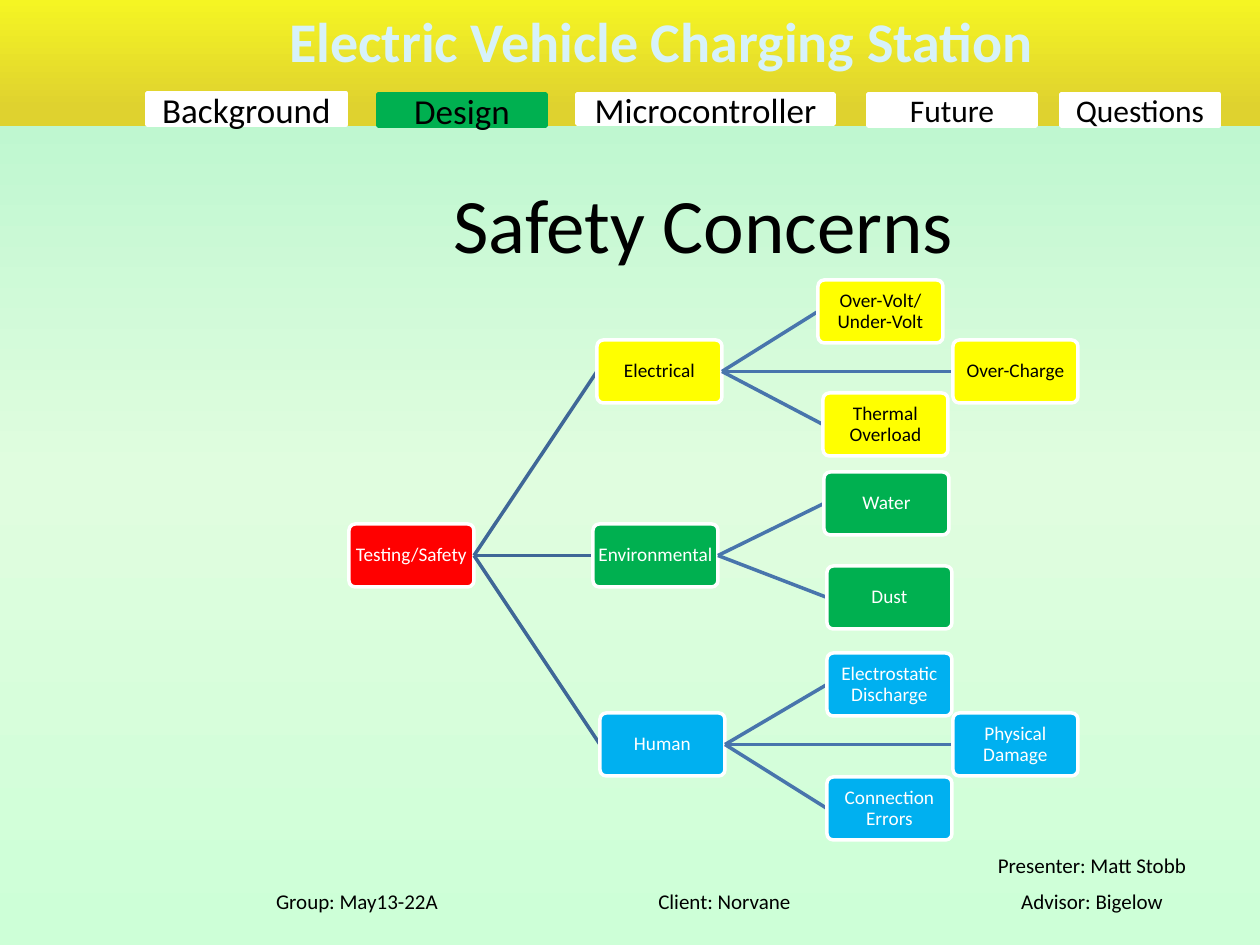
from dataclasses import dataclass
from typing import Optional

from lxml.etree import SubElement
from pptx import Presentation
from pptx.dml.color import RGBColor
from pptx.enum.shapes import MSO_CONNECTOR, MSO_SHAPE
from pptx.enum.text import MSO_ANCHOR, PP_ALIGN
from pptx.oxml.ns import qn
from pptx.util import Emu, Pt

FONT = "Calibri"
BLACK = RGBColor(0x00, 0x00, 0x00)
WHITE = RGBColor(0xFF, 0xFF, 0xFF)
RED = RGBColor(0xFF, 0x00, 0x00)
YELLOW = RGBColor(0xFF, 0xFF, 0x00)
GREEN = RGBColor(0x00, 0xB0, 0x50)
BLUE = RGBColor(0x00, 0xB0, 0xF0)
PALE_BLUE = RGBColor(0xD7, 0xF2, 0xF9)
OUTLINE_BLUE = RGBColor(0x05, 0x46, 0x97)
BRANCH_COLORS = (RGBColor(0x3F, 0x67, 0x97), RGBColor(0x48, 0x75, 0xAC))
PAGE_STOPS = ((0, RGBColor(0xB3, 0xF5, 0xCB)),
              (50, RGBColor(0xE0, 0xFD, 0xDF)),
              (100, RGBColor(0xCD, 0xFF, 0xD7)))
BANNER_STOPS = ((0, RGBColor(0xF5, 0xF5, 0x23)),
                (86, RGBColor(0xDF, 0xD2, 0x2F)))

PX_PER_INCH = 126
NODE_W, NODE_H = 125, 63


@dataclass
class Tab:
    label: str
    x: int
    y: int
    w: int
    h: int
    size: int
    fill: RGBColor = WHITE


@dataclass
class Caption:
    label: str
    x: int
    y: int
    w: int


@dataclass
class Node:
    label: str
    x: int
    y: int
    fill: RGBColor
    ink: RGBColor = WHITE
    children: tuple = ()


TABS = (
    Tab("Design", 378, 94, 168, 32, 20, GREEN),
    Tab("Future", 868, 94, 168, 32, 18),
    Tab("Background", 147, 93, 199, 32, 20),
    Tab("Questions", 1061, 94, 158, 32, 18),
    Tab("Microcontroller", 577, 94, 257, 30, 20),
)

CAPTIONS = (
    Caption("Group: May13-22A", 210, 876, 294),
    Caption("Client: Norvane", 525, 876, 399),
    Caption("Advisor: Bigelow", 945, 876, 294),
    Caption("Presenter: Matt Stobb", 945, 840, 294),
)

SAFETY_TREE = Node("Testing/Safety", 349, 524, RED, children=(
    Node("Electrical", 597, 340, YELLOW, BLACK, (
        Node("Over-Volt/ Under-Volt", 818, 280, YELLOW, BLACK),
        Node("Over-Charge", 953, 340, YELLOW, BLACK),
        Node("Thermal Overload", 823, 393, YELLOW, BLACK),
    )),
    Node("Environmental", 593, 524, GREEN, children=(
        Node("Water", 824, 472, GREEN),
        Node("Dust", 827, 566, GREEN),
    )),
    Node("Human", 600, 713, BLUE, children=(
        Node("Electrostatic Discharge", 827, 653, BLUE),
        Node("Physical Damage", 953, 713, BLUE),
        Node("Connection Errors", 827, 777, BLUE),
    )),
))


def px(length: int) -> Emu:
    return Emu(round(length * 914400 / PX_PER_INCH))


def set_gradient(fill, owner, stops) -> None:
    """Fill from top to bottom with (percent, colour) stops."""
    fill.gradient()
    fill.gradient_angle = 270
    stop_list = owner.find(".//" + qn("a:gsLst"))
    for old_stop in list(stop_list):
        stop_list.remove(old_stop)
    for percent, color in stops:
        stop = SubElement(stop_list, qn("a:gs"), pos=str(percent * 1000))
        SubElement(stop, qn("a:srgbClr"), val=str(color))


def write(frame, text: str, size: int, color: RGBColor, anchor=MSO_ANCHOR.MIDDLE):
    """Put one centred run in a text frame."""
    frame.word_wrap = True
    frame.vertical_anchor = anchor
    paragraph = frame.paragraphs[0]
    paragraph.alignment = PP_ALIGN.CENTER
    run = paragraph.add_run()
    run.text = text
    run.font.name, run.font.size = FONT, Pt(size)
    run.font.color.rgb = color
    return run


def add_box(slide, preset, x: int, y: int, w: int, h: int, fill: RGBColor):
    box = slide.shapes.add_shape(preset, px(x), px(y), px(w), px(h))
    box.shadow.inherit = False
    box.fill.solid()
    box.fill.fore_color.rgb = fill
    box.line.width = Pt(2)
    return box


def add_banner(slide) -> None:
    banner = add_box(slide, MSO_SHAPE.RECTANGLE, 0, 0, 1260, 126, YELLOW)
    set_gradient(banner.fill, banner.element, BANNER_STOPS)
    banner.line.fill.background()

    heading = slide.shapes.add_textbox(px(231), px(0), px(861), px(81))
    run = write(heading.text_frame, "Electric Vehicle Charging Station", 32,
                PALE_BLUE, MSO_ANCHOR.TOP)
    run.font.bold = True
    # Letter outline goes ahead of the fill in the run properties
    properties = run.font._element
    outline = SubElement(properties, qn("a:ln"), w=str(Pt(1)))
    outline_fill = SubElement(outline, qn("a:solidFill"))
    SubElement(outline_fill, qn("a:srgbClr"), val=str(OUTLINE_BLUE))
    properties.insert(0, outline)


def add_tab(slide, tab: Tab) -> None:
    box = add_box(slide, MSO_SHAPE.RECTANGLE, tab.x, tab.y, tab.w, tab.h, tab.fill)
    box.line.color.rgb = tab.fill
    write(box.text_frame, tab.label, tab.size, BLACK)


def add_caption(slide, caption: Caption) -> None:
    box = slide.shapes.add_textbox(px(caption.x), px(caption.y), px(caption.w), px(50))
    write(box.text_frame, caption.label, 12, BLACK)


def add_node(slide, node: Node, parent: Optional[object] = None, level: int = 0) -> None:
    """Draw a node, its branch from the parent, then its children."""
    box = add_box(slide, MSO_SHAPE.ROUNDED_RECTANGLE, node.x, node.y,
                  NODE_W, NODE_H, node.fill)
    box.adjustments[0] = 0.1
    box.line.color.rgb = WHITE
    frame = box.text_frame
    frame.margin_left = frame.margin_right = px(1)
    frame.margin_top = frame.margin_bottom = px(1)
    write(frame, node.label, 11, node.ink)
    frame.paragraphs[0].line_spacing = 0.9

    if parent is not None:
        branch = slide.shapes.add_connector(MSO_CONNECTOR.STRAIGHT, 0, 0, 0, 0)
        branch.begin_connect(parent, 3)
        branch.end_connect(box, 1)
        branch.line.color.rgb = BRANCH_COLORS[level - 1]
        branch.line.width = Pt(2)
        SubElement(branch.element.spPr, qn("a:effectLst"))
        box.element.addprevious(branch.element)  # branch ends under the child

    for child in node.children:
        add_node(slide, child, box, level + 1)


def main() -> None:
    deck = Presentation()
    deck.slide_width, deck.slide_height = px(1260), px(945)
    slide = deck.slides.add_slide(deck.slide_layouts[5])
    set_gradient(slide.background.fill, slide.element, PAGE_STOPS)

    # Title
    title = slide.shapes.title
    title.left, title.top, title.width, title.height = px(189), px(152), px(1029), px(142)
    write(title.text_frame, "Safety Concerns", 44, BLACK)

    # Banner with section tabs
    add_banner(slide)
    for tab in TABS:
        add_tab(slide, tab)

    # Safety tree
    add_node(slide, SAFETY_TREE)

    # Footer
    for caption in CAPTIONS:
        add_caption(slide, caption)

    deck.save("out.pptx")


if __name__ == "__main__":
    main()
